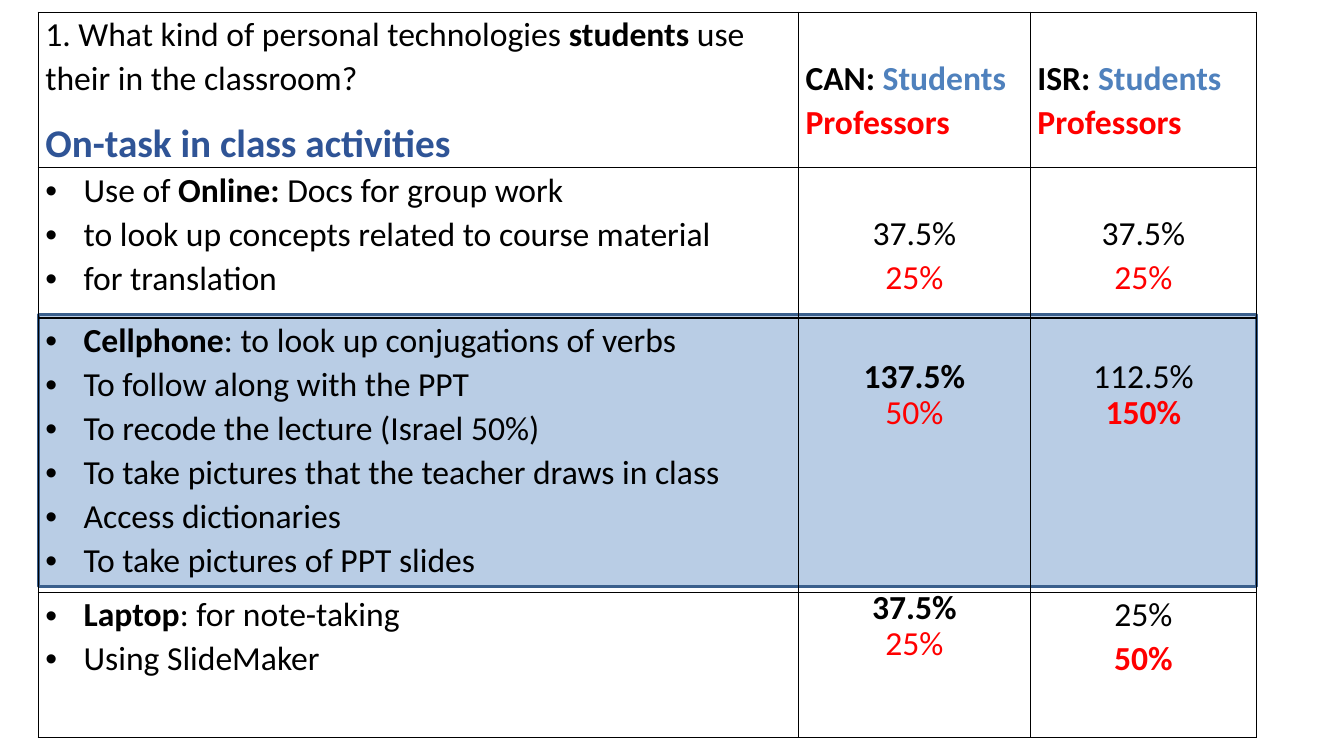
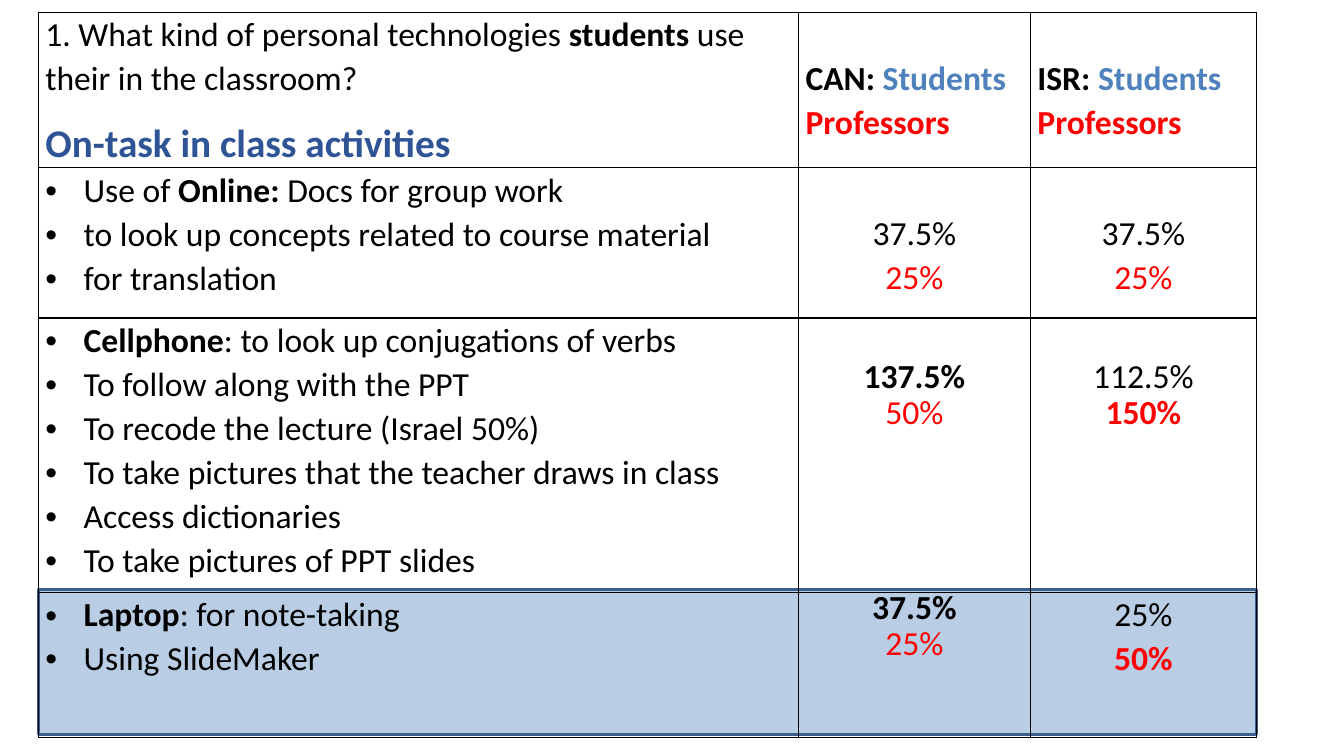
from lxml.etree import SubElement as Sub
from pptx import Presentation
from pptx.dml.color import RGBColor as RGB
from pptx.enum.shapes import MSO_SHAPE as Shape
from pptx.enum.text import PP_ALIGN as Align
from pptx.oxml.ns import qn
from pptx.util import Inches as In, Pt

BLACK = RGB(0x00, 0x00, 0x00)
RED = RGB(0xFF, 0x00, 0x00)
BLUE = RGB(0x4F, 0x81, 0xBD)
NAVY = RGB(0x2F, 0x54, 0x96)
PALE = RGB(0xB9, 0xCD, 0xE5)
EDGE = RGB(0x3A, 0x5F, 0x8C)
FONT = "Calibri"
SIZE = 24
LINE = 1.07
TIGHT = Pt(25.7)
DROP = 0.43
LEFT, TOP = 0.38, 0.12
COLS = [7.54, 2.3, 2.24]
ROWS = [1.52, 1.49, 2.72, 1.44]

TASKS = [
    [[("Use of ", False), ("Online: ", True), ("Docs for group work", False)],
     [("to look up concepts related to course material", False)],
     [("for translation", False)]],
    [[("Cellphone", True), (": to look up conjugations of verbs", False)],
     [("To follow along with the PPT", False)],
     [("To recode the lecture (Israel 50%)", False)],
     [("To take pictures that the teacher draws in class", False)],
     [("Access dictionaries", False)],
     [("To take pictures of PPT slides", False)]],
    [[("Laptop", True), (": for note-taking", False)],
     [("Using SlideMaker", False)]],
]
RATES = [
    [(("37.5%", False), ("25%", False), DROP, LINE),
     (("37.5%", False), ("25%", False), DROP, LINE)],
    [(("137.5%", True), ("50%", False), DROP, TIGHT),
     (("112.5%", False), ("150%", True), DROP, TIGHT)],
    [(("37.5%", True), ("25%", False), 0, TIGHT),
     (("25%", False), ("50%", True), 0, LINE)],
]


def frame(cell):
    props = cell._tc.get_or_add_tcPr()
    for side in ("lnL", "lnR", "lnT", "lnB"):
        line = Sub(props, qn(f"a:{side}"), w=str(Pt(1)))
        fill = Sub(line, qn("a:solidFill"))
        Sub(fill, qn("a:srgbClr"), val=str(BLACK))
    cell.fill.background()


def write(cell, lines, top=0, gap=0, size=SIZE, space=LINE,
          align=Align.LEFT, dots=False):
    cell.margin_left = cell.margin_right = In(0.07)
    cell.margin_top, cell.margin_bottom = In(top), 0
    text = cell.text_frame
    for i, runs in enumerate(lines):
        para = text.add_paragraph() if i else text.paragraphs[0]
        para.alignment = align
        para.line_spacing = space
        para.space_before = Pt(gap)
        if dots:
            props = para._p.get_or_add_pPr()
            props.set("marL", str(In(0.38)))
            props.set("indent", str(-In(0.38)))
            Sub(props, qn("a:buFont"), typeface="Arial")
            Sub(props, qn("a:buChar"), char="•")
        para.font.name = FONT
        for words, color, bold, *big in runs:
            run = para.add_run()
            run.text = words
            font = run.font
            font.name = FONT
            font.size = Pt(big[0] if big else size)
            font.bold = bold
            font.color.rgb = color


def head(cells):
    write(cells[0], [
        [("1. What kind of personal technologies ", BLACK, False),
         ("students ", BLACK, True),
         ("use their in the classroom?", BLACK, False)],
        [("On-task in class activities", NAVY, True, 28)],
    ], gap=12)
    for cell, land in zip(cells[1:], ("CAN: ", "ISR: ")):
        write(cell, [
            [(land, BLACK, True), ("Students", BLUE, True)],
            [("Professors", RED, True)],
        ], top=DROP)


def body(cells, tasks, rates):
    write(cells[0], [[(words, BLACK, bold) for words, bold in runs]
                     for runs in tasks], dots=True)
    for cell, (pupil, prof, top, space) in zip(cells[1:], rates):
        write(cell, [[(pupil[0], BLACK, pupil[1])], [(prof[0], RED, prof[1])]],
              top=top, space=space, align=Align.CENTER)


def band(slide, row, inset):
    top = TOP + sum(ROWS[:row]) - inset
    rect = slide.shapes.add_shape(
        Shape.RECTANGLE, In(LEFT), In(top),
        In(sum(COLS)), In(ROWS[row] - 2 * inset))
    rect.shadow.inherit = False
    rect.fill.solid()
    rect.fill.fore_color.rgb = PALE
    rect.line.color.rgb = EDGE
    rect.line.width = Pt(2)


def grid(slide):
    table = slide.shapes.add_table(
        len(ROWS), len(COLS), In(LEFT), In(TOP),
        In(sum(COLS)), In(sum(ROWS))).table
    table.first_row = table.horz_banding = False
    for col, width in zip(table.columns, COLS):
        col.width = In(width)
    for row, height in zip(table.rows, ROWS):
        row.height = In(height)
    for cell in table.iter_cells():
        frame(cell)
    first, *rest = [list(row.cells) for row in table.rows]
    head(first)
    for cells, tasks, rates in zip(rest, TASKS, RATES):
        body(cells, tasks, rates)


def main():
    deck = Presentation()
    deck.slide_width, deck.slide_height = In(13.33), In(7.5)
    for row, inset in ((2, 0.01), (3, 0)):
        slide = deck.slides.add_slide(deck.slide_layouts[6])
        band(slide, row, inset)
        grid(slide)
    deck.save("out.pptx")


if __name__ == "__main__":
    main()
